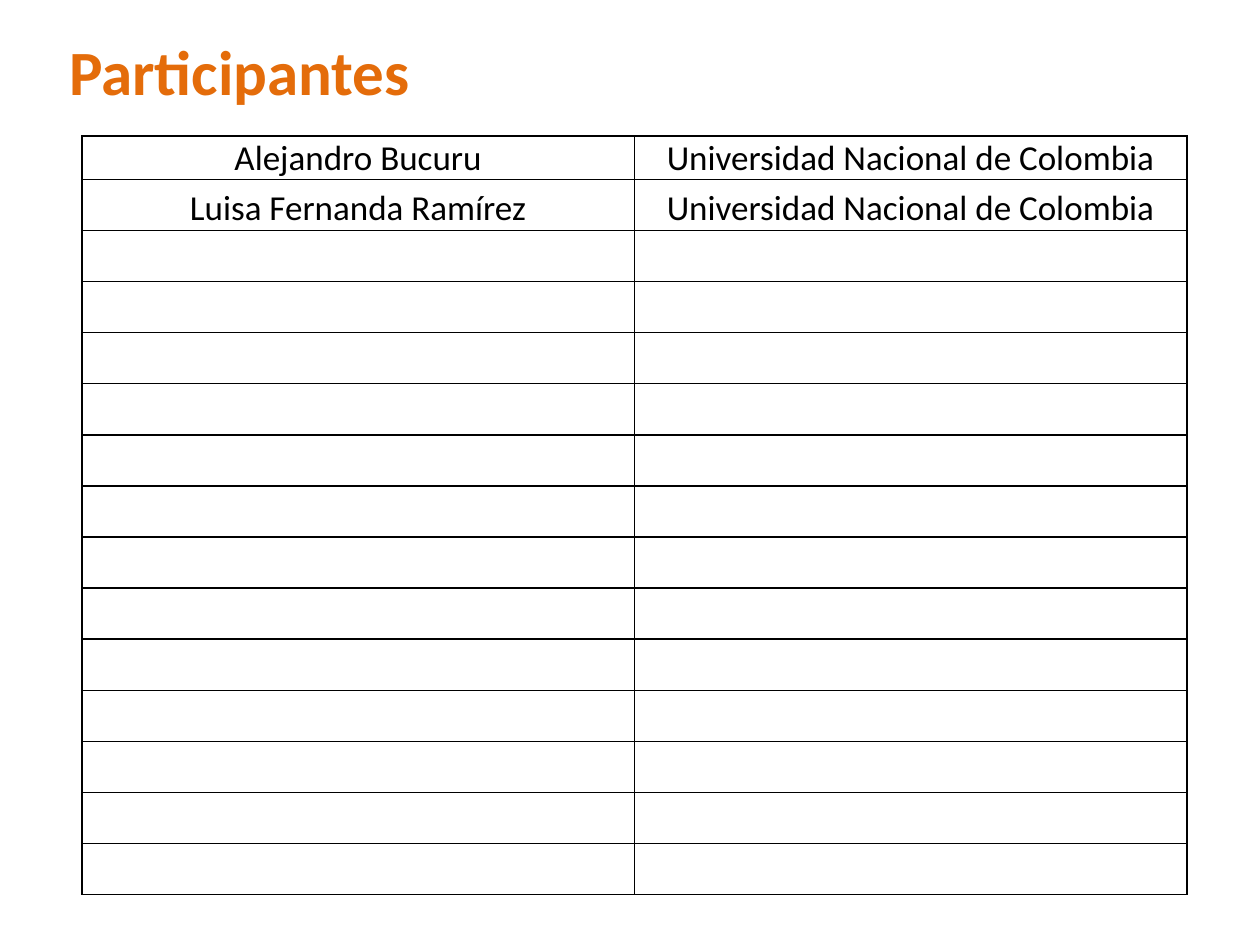
from lxml.etree import SubElement
from pptx import Presentation
from pptx.dml.color import RGBColor
from pptx.enum.text import MSO_ANCHOR, MSO_AUTO_SIZE, PP_ALIGN
from pptx.oxml.ns import qn
from pptx.util import Inches, Pt

ORANGE = RGBColor(0xE4, 0x6C, 0x0A)
BLACK = RGBColor(0, 0, 0)
WHITE = RGBColor(0xFF, 0xFF, 0xFF)

UNIVERSITY = "Universidad Nacional de Colombia"
PARTICIPANTS = [
    ("Alejandro Bucuru", UNIVERSITY),
    ("Luisa Fernanda Ramírez", UNIVERSITY),
]
ROW_COUNT = 15
FIRST_ROW_HEIGHT = 0.32


class SlideBuilder:
    font_name = "Calibri"

    def __init__(self, slide):
        self.slide = slide

    def style(self, para, size, color, bold=False):
        para.font.name = self.font_name
        para.font.size = Pt(size)
        para.font.color.rgb = color
        para.font.bold = bold

    def title(self, text, left, top, width, height):
        box = self.slide.shapes.add_textbox(
            Inches(left), Inches(top), Inches(width), Inches(height))
        frame = box.text_frame
        frame.word_wrap = False
        frame.auto_size = MSO_AUTO_SIZE.SHAPE_TO_FIT_TEXT
        para = frame.paragraphs[0]
        para.text = text
        self.style(para, 36, ORANGE, bold=True)

    def table(self, entries, left, top, width, height):
        """Add a two-column list; rows beyond the entries stay empty."""
        table = self.slide.shapes.add_table(
            ROW_COUNT, 2, Inches(left), Inches(top), Inches(width), Inches(height)).table
        table.first_row = False
        table.horz_banding = False
        row_height = (height - FIRST_ROW_HEIGHT) / (ROW_COUNT - 1)
        for index, row in enumerate(table.rows):
            row.height = Inches(row_height if index else FIRST_ROW_HEIGHT)
            texts = entries[index] if index < len(entries) else ("", "")
            for cell, text in zip(row.cells, texts):
                self.cell(cell, text)

    def cell(self, cell, text):
        cell.margin_left = cell.margin_right = cell.margin_top = Inches(0.01)
        cell.margin_bottom = 0
        cell.vertical_anchor = MSO_ANCHOR.BOTTOM
        para = cell.text_frame.paragraphs[0]
        para.text = text
        para.alignment = PP_ALIGN.CENTER
        self.style(para, 20, BLACK)
        self.borders(cell)
        cell.fill.solid()
        cell.fill.fore_color.rgb = WHITE

    def borders(self, cell):
        properties = cell._tc.get_or_add_tcPr()
        for side in ("a:lnL", "a:lnR", "a:lnT", "a:lnB"):
            line = SubElement(properties, qn(side), w=str(Pt(1)))
            fill = SubElement(line, qn("a:solidFill"))
            SubElement(fill, qn("a:srgbClr"), val=str(BLACK))


def main():
    deck = Presentation()
    deck.slide_width = Inches(10)
    deck.slide_height = Inches(7.5)
    builder = SlideBuilder(deck.slides.add_slide(deck.slide_layouts[6]))
    builder.title("Participantes", 0.45, 0.21, 3.05, 0.71)
    builder.table(PARTICIPANTS, 0.65, 1.08, 8.77, 6)
    deck.save("out.pptx")


if __name__ == "__main__":
    main()
